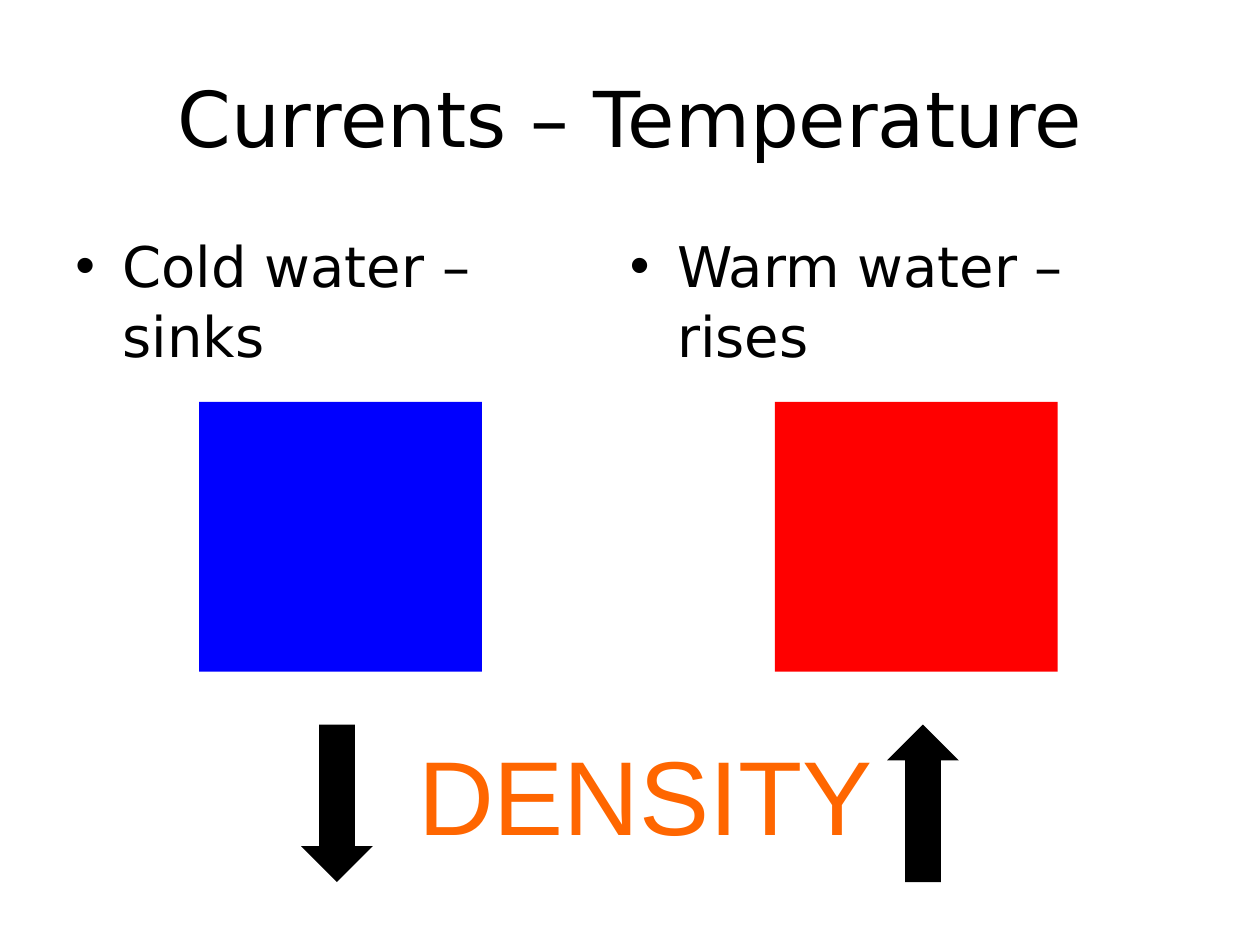
from lxml import etree
from pptx import Presentation
from pptx.dml.color import RGBColor
from pptx.enum import shapes, text
from pptx.oxml import ns
from pptx.util import Pt

COLORS = {"ink": "000000", "cold": "0000FF", "warm": "FF0000", "density": "FF6600"}

deck = Presentation()
deck.slide_width, deck.slide_height = Pt(720), Pt(540)
slide = deck.slides.add_slide(deck.slide_layouts[6])


def add_text(wording, left, top, width, height, size, font, color):
    box = slide.shapes.add_textbox(Pt(left), Pt(top), Pt(width), Pt(height))
    box.text_frame.word_wrap = True
    box.text_frame.text = wording
    face = box.text_frame.paragraphs[0].runs[0].font
    face.size, face.name = Pt(size), font
    face.color.rgb = RGBColor.from_string(COLORS[color])
    return box.text_frame


def add_solid(kind, left, top, width, height, color):
    solid = slide.shapes.add_shape(kind, Pt(left), Pt(top), Pt(width), Pt(height))
    solid.shadow.inherit = False
    solid.fill.solid()
    solid.fill.fore_color.rgb = RGBColor.from_string(COLORS[color])
    solid.line.fill.background()
    return solid


title = add_text("Currents – Temperature", 36, 21.6, 648, 90, 44, "DejaVu Sans", "ink")
title.vertical_anchor = text.MSO_ANCHOR.MIDDLE
title.paragraphs[0].alignment = text.PP_ALIGN.CENTER

waters = [
    ("Cold water – sinks", 36, 113.76, "cold", 172.08, 0),
    ("Warm water – rises", 352.8, 442.8, "warm", 506.88, 180),
]
for statement, statement_left, water_left, color, arrow_left, turn in waters:
    behaviour = add_text(statement, statement_left, 127, 316.8, 356, 32, "DejaVu Sans", "ink")
    bullet_line = behaviour.paragraphs[0]
    bullet_line.line_spacing = 1.04
    props = bullet_line._p.get_or_add_pPr()
    props.set("marL", str(Pt(27)))
    props.set("indent", str(Pt(-27)))
    etree.SubElement(props, ns.qn("a:buFont"), typeface="Arial")
    etree.SubElement(props, ns.qn("a:buChar"), char="•")

    add_solid(shapes.MSO_SHAPE.RECTANGLE, water_left, 229.68, 161.64, 154.08, color)
    arrow = add_solid(shapes.MSO_SHAPE.DOWN_ARROW, arrow_left, 414, 41, 90, "ink")
    arrow.rotation = turn

add_text("DENSITY", 231.84, 414, 316, 80, 60, "Arial", "density")

deck.save("out.pptx")
